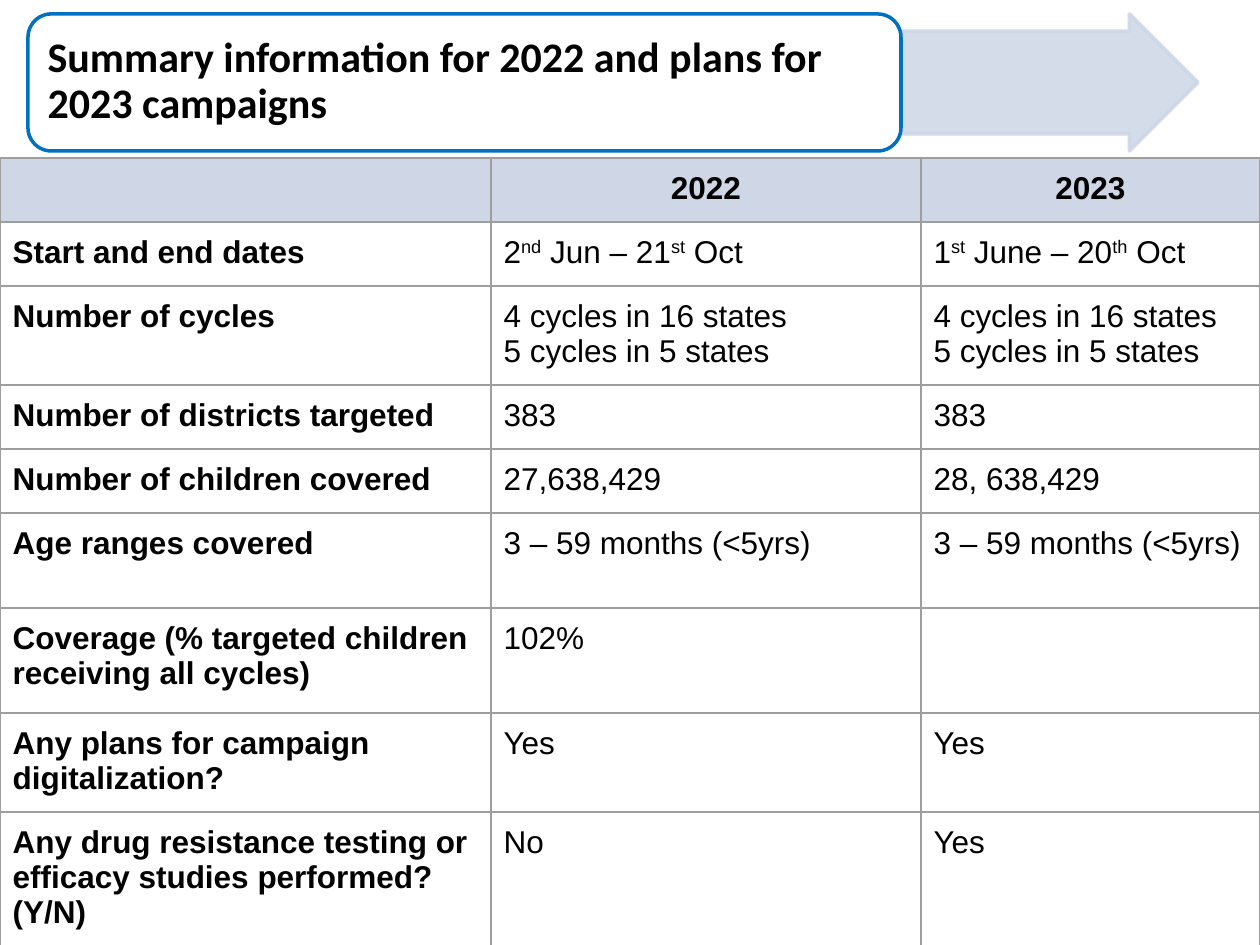
from lxml.etree import SubElement
from pptx import Presentation
from pptx.dml.color import RGBColor
from pptx.enum.shapes import MSO_SHAPE
from pptx.enum.text import MSO_ANCHOR, MSO_AUTO_SIZE, PP_ALIGN
from pptx.oxml.ns import qn
from pptx.util import Emu, Pt

PX = 914400 / 126
COLORS = {"band": "CFD7E7", "outline": "0070C0", "grid": "9E9E9E", "paper": "FFFFFF", "ink": "000000"}
TITLE = "Summary information for 2022 and plans for 2023 campaigns"
CYCLES = "4 cycles in 16 states\n5 cycles in 5 states"
AGES = "3 – 59 months (<5yrs)"
ROWS = [
    (64, "", "2022", "2023"),
    (64, "Start and end dates", "2^nd^ Jun – 21^st^ Oct", "1^st^ June – 20^th^ Oct"),
    (99, "Number of cycles", CYCLES, CYCLES),
    (64, "Number of districts targeted", "383", "383"),
    (64, "Number of children covered", "27,638,429", "28, 638,429"),
    (95, "Age ranges covered", AGES, AGES),
    (105, "Coverage (% targeted children receiving all cycles)", "102%", ""),
    (99, "Any plans for campaign digitalization?", "Yes", "Yes"),
    (136, "Any drug resistance testing or efficacy studies performed? (Y/N)", "No", "Yes"),
]
COLUMN_WIDTHS = (491, 430, 339)
TABLE_TOP = 158
ARROW_BOX = (901, 14, 297, 137)
BANNER_BOX = (28, 14, 873, 137)
TITLE_BOX = (35, 20, 859, 124)


def px(value):
    return Emu(round(value * PX))


def color(name):
    return RGBColor.from_string(COLORS[name])


def style_run(run, font, size, bold):
    run.font.name, run.font.size, run.font.bold = font, Pt(size), bold
    run.font.color.rgb = color("ink")


def add_banner_shape(slide, preset, box, fill, line, adjustments, opacity=None):
    shape = slide.shapes.add_shape(preset, *map(px, box))
    shape.shadow.inherit = False
    for index, value in enumerate(adjustments):
        shape.adjustments[index] = value
    shape.fill.solid()
    shape.fill.fore_color.rgb = color(fill)
    shape.line.color.rgb = color(line)
    shape.line.width = Pt(2)
    if opacity:
        for tint in shape._element.spPr.iter(qn("a:srgbClr")):
            SubElement(tint, qn("a:alpha"), val=str(opacity * 1000))


def place_title(slide):
    title = slide.shapes.title
    title.left, title.top, title.width, title.height = map(px, TITLE_BOX)
    slide.shapes._spTree.append(title._element)
    frame = title.text_frame
    frame.word_wrap = True
    frame.auto_size = MSO_AUTO_SIZE.NONE
    frame.vertical_anchor = MSO_ANCHOR.MIDDLE
    paragraph = frame.paragraphs[0]
    paragraph.alignment = PP_ALIGN.LEFT
    paragraph.line_spacing = 0.9
    run = paragraph.add_run()
    run.text = TITLE
    style_run(run, "Calibri", 24, True)


def write_cell(cell, text, bold, alignment):
    for number, line in enumerate(text.split("\n")):
        frame = cell.text_frame
        paragraph = frame.add_paragraph() if number else frame.paragraphs[0]
        paragraph.alignment = alignment
        for index, part in enumerate(line.split("^")):
            if not part:
                continue
            run = paragraph.add_run()
            run.text = part
            style_run(run, "Arial", 18, bold)
            if index % 2:
                run.font._element.set("baseline", "30000")


def add_borders(cell):
    properties = cell._tc.get_or_add_tcPr()
    for index, side in enumerate(("a:lnL", "a:lnR", "a:lnT", "a:lnB")):
        line = properties.makeelement(qn(side), {"w": str(Pt(1.5))})
        fill = SubElement(line, qn("a:solidFill"))
        SubElement(fill, qn("a:srgbClr"), val=COLORS["grid"])
        properties.insert(index, line)


def add_summary_table(slide):
    heights = [row[0] for row in ROWS]
    frame = slide.shapes.add_table(
        len(ROWS), len(COLUMN_WIDTHS), 0, px(TABLE_TOP), px(sum(COLUMN_WIDTHS)), px(sum(heights)))
    table = frame.table
    table.first_row = table.horz_banding = False
    for column, width in zip(table.columns, COLUMN_WIDTHS):
        column.width = px(width)
    for row_index, (height, *texts) in enumerate(ROWS):
        table.rows[row_index].height = px(height)
        header = row_index == 0
        for column_index, text in enumerate(texts):
            cell = table.cell(row_index, column_index)
            cell.margin_left = cell.margin_right = cell.margin_top = cell.margin_bottom = Pt(7.2)
            if header:
                cell.fill.solid()
                cell.fill.fore_color.rgb = color("band")
            else:
                cell.fill.background()
            alignment = PP_ALIGN.CENTER if header else PP_ALIGN.LEFT
            write_cell(cell, text, header or column_index == 0, alignment)
            add_borders(cell)


def main():
    """Build the campaign summary slide."""
    presentation = Presentation()
    presentation.slide_width, presentation.slide_height = px(1260), px(945)
    slide = presentation.slides.add_slide(presentation.slide_layouts[5])
    add_banner_shape(slide, MSO_SHAPE.RIGHT_ARROW, ARROW_BOX, "band", "band", (0.75, 0.5), 89)
    add_banner_shape(slide, MSO_SHAPE.ROUNDED_RECTANGLE, BANNER_BOX, "paper", "outline", (0.17,))
    place_title(slide)
    add_summary_table(slide)
    presentation.save("out.pptx")


if __name__ == "__main__":
    main()
